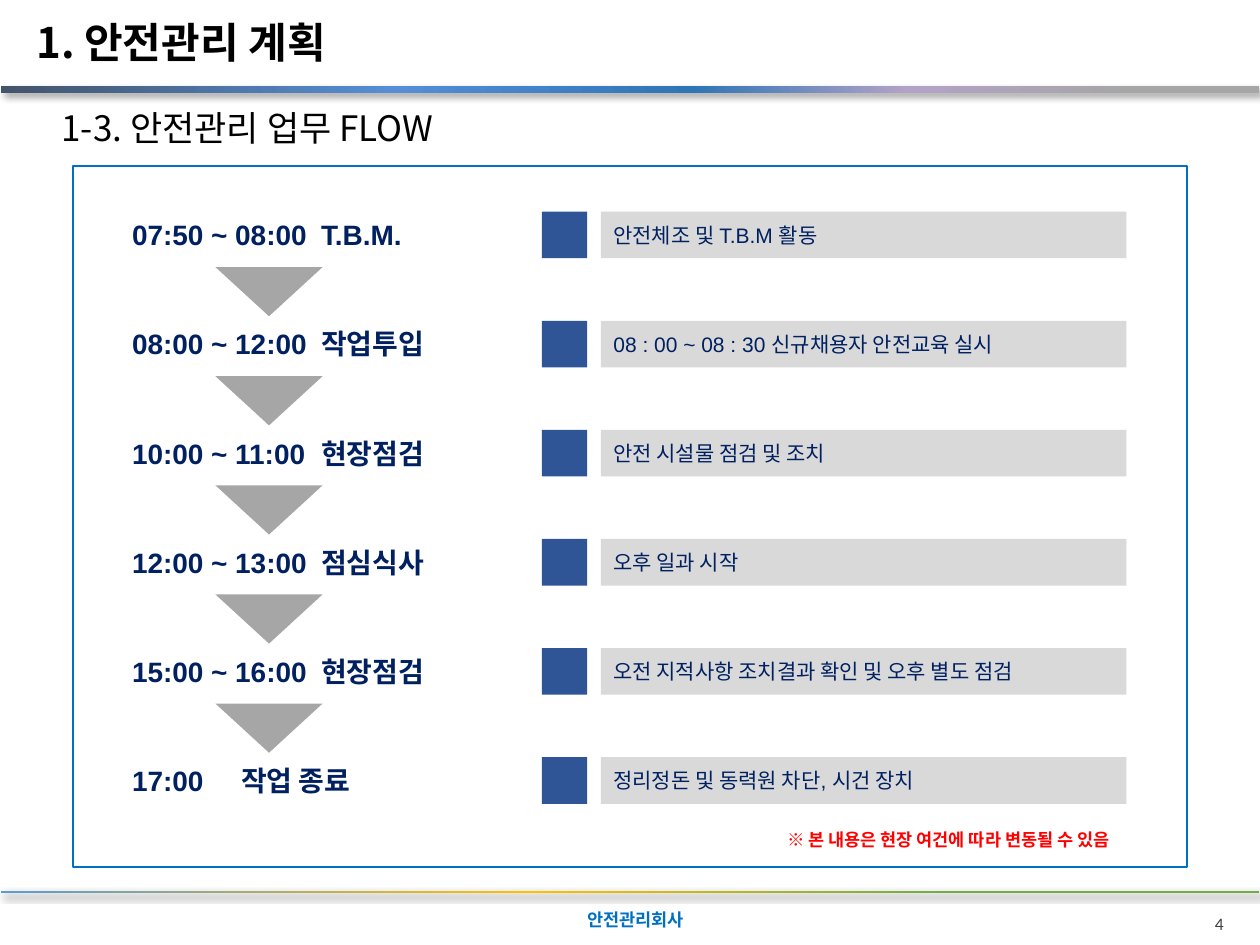
import pptx
import pptx.dml.color
import pptx.enum.shapes
import pptx.enum.text
import pptx.oxml
import pptx.oxml.ns
import pptx.util
from dataclasses import dataclass

SHAPE = pptx.enum.shapes.MSO_SHAPE
ALIGN = pptx.enum.text.PP_ALIGN
ANCHOR = pptx.enum.text.MSO_ANCHOR
RGB = pptx.dml.color.RGBColor.from_string
NAMESPACE = pptx.oxml.ns.nsdecls("a")

UNIT = 0.1
ROW_TOP, ROW_PITCH, ROW_HEIGHT = 16.8, 8.66, 3.7
LABEL_COLUMN = (9.5, 27.6)
MARKER_COLUMN = (43, 3.6)
DETAIL_COLUMN = (47.7, 41.7)
ARROW_COLUMN = (17.1, 8.5)
ARROW_OFFSET, ARROW_HEIGHT = 4.4, 3.9
TASK_TAB, CLOSING_TAB = 15, 8.65

STEPS = [
    ("07:50 ~ 08:00", "T.B.M.", TASK_TAB, "안전체조 및 T.B.M 활동"),
    ("08:00 ~ 12:00", "작업투입", TASK_TAB, "08 : 00 ~ 08 : 30 신규채용자 안전교육 실시"),
    ("10:00 ~ 11:00", "현장점검", TASK_TAB, "안전 시설물 점검 및 조치"),
    ("12:00 ~ 13:00", "점심식사", TASK_TAB, "오후 일과 시작"),
    ("15:00 ~ 16:00", "현장점검", TASK_TAB, "오전 지적사항 조치결과 확인 및 오후 별도 점검"),
    ("17:00", "작업 종료", CLOSING_TAB, "정리정돈 및 동력원 차단, 시건 장치"),
]


@dataclass(frozen=True)
class Theme:
    """Colours, typefaces and type sizes of the slide."""
    korean: str = "Noto Sans CJK KR"
    latin: str = "Arial"
    number: str = "Calibri"
    black: str = "000000"
    navy: str = "002060"
    blue: str = "0070C0"
    marker: str = "2F5597"
    bar: str = "D9D9D9"
    arrow: str = "A6A6A6"
    red: str = "FF0000"
    grey: str = "404040"
    title: int = 24
    subtitle: int = 20
    label: int = 16
    detail: int = 12
    small: int = 10
    header: tuple = ((0, "44546A"), (31, "558ED5"), (55, "2E75B6"), (72, "B3A2C7"), (90, "A6A6A6"))
    footer: tuple = ((0, "5B9BD5"), (42, "FFC000"), (75, "70AD47"))


THEME = Theme()


def units(value):
    """Turn grid units into a length."""
    return pptx.util.Inches(value * UNIT)


def write(shape, text, font, size, color, bold=False, tab=None, para_format=None, **frame_format):
    """Fill a shape with one formatted paragraph."""
    frame = shape.text_frame
    for name, value in ({"word_wrap": True} | frame_format).items():
        setattr(frame, name, value)
    para = frame.paragraphs[0]
    for name, value in ({"alignment": ALIGN.LEFT} | (para_format or {})).items():
        setattr(para, name, value)
    if tab:
        para._p.get_or_add_pPr().append(pptx.oxml.parse_xml(
            f'<a:tabLst {NAMESPACE}><a:tab pos="{units(tab)}" algn="l"/></a:tabLst>'))
    span = para.add_run()
    span.text = text
    for name, value in {"name": font, "size": pptx.util.Pt(size), "bold": bold}.items():
        setattr(span.font, name, value)
    span.font.color.rgb = RGB(color)
    span.font._element.append(pptx.oxml.parse_xml(
        f'<a:ea {NAMESPACE} typeface="{THEME.korean}"/>'))


def add_text(page, place, text, font, size, color, **formats):
    """Add a text box at a grid place."""
    box = page.shapes.add_textbox(*map(units, place))
    write(box, text, font, size, color, **formats)
    return box


def add_block(page, kind, place, fill=None, line=None):
    """Add a flat preset shape at a grid place."""
    shape = page.shapes.add_shape(kind, *map(units, place))
    shape.shadow.inherit = False
    if fill:
        shape.fill.solid()
        shape.fill.fore_color.rgb = RGB(fill)
    else:
        shape.fill.background()
    if line:
        shape.line.color.rgb = RGB(line)
        shape.line.width = pptx.util.Pt(1)
    else:
        shape.line.fill.background()
    return shape


def add_rule(page, top, height, stops):
    """Add a full-width gradient rule with a soft shadow."""
    rule = add_block(page, SHAPE.RECTANGLE, (0.1, top, 99.8, height))
    rule.fill.gradient()
    rule.fill.gradient_angle = 0
    properties = rule._element.spPr
    stop_list = properties.find(".//" + pptx.oxml.ns.qn("a:gsLst"))
    stop_list[:] = [pptx.oxml.parse_xml(
        f'<a:gs {NAMESPACE} pos="{share * 1000}"><a:srgbClr val="{color}"/></a:gs>')
        for share, color in stops]
    properties.find(pptx.oxml.ns.qn("a:effectLst")).append(pptx.oxml.parse_xml(
        f'<a:outerShdw {NAMESPACE} blurRad="{pptx.util.Pt(4)}" dist="{pptx.util.Pt(3)}" '
        f'dir="2700000" algn="tl" rotWithShape="0"><a:srgbClr val="{THEME.black}">'
        '<a:alpha val="40000"/></a:srgbClr></a:outerShdw>'))


def add_step(page, row, time, task, tab, detail):
    """Add one row of the flow: time and task, marker and detail bar."""
    def cell(column):
        left, width = column
        return left, ROW_TOP + row * ROW_PITCH, width, ROW_HEIGHT

    add_text(page, cell(LABEL_COLUMN), f"{time}\t{task}", THEME.latin, THEME.label,
             THEME.navy, bold=True, tab=tab)
    bar = add_block(page, SHAPE.RECTANGLE, cell(DETAIL_COLUMN), THEME.bar)
    write(bar, detail, THEME.latin, THEME.detail, THEME.navy, vertical_anchor=ANCHOR.MIDDLE)
    add_block(page, SHAPE.RECTANGLE, cell(MARKER_COLUMN), THEME.marker)


def add_arrow(page, row):
    """Add the downward triangle below a row."""
    left, width = ARROW_COLUMN
    top = ROW_TOP + ARROW_OFFSET + row * ROW_PITCH
    arrow = add_block(page, SHAPE.ISOSCELES_TRIANGLE, (left, top, width, ARROW_HEIGHT), THEME.arrow)
    arrow.rotation = 180


def add_furniture(page):
    """Add the rules, headings, footer and page number."""
    add_rule(page, 6.8, 0.6, THEME.header)
    add_rule(page, 70.7, 0.2, THEME.footer)
    add_text(page, (1.9, 0, 36.8, 6.7), "1. 안전관리 계획", THEME.korean, THEME.title,
             THEME.black, bold=True, vertical_anchor=ANCHOR.MIDDLE)
    add_text(page, (3.9, 8, 36, 4.4), "1-3. 안전관리 업무 FLOW", THEME.korean,
             THEME.subtitle, THEME.black)
    margins = dict.fromkeys(
        ("margin_left", "margin_top", "margin_right", "margin_bottom"), units(0.3))
    add_text(page, (46.3, 71.4, 21.8, 3.2), "안전관리회사", THEME.korean, THEME.small,
             THEME.blue, bold=True, vertical_anchor=ANCHOR.MIDDLE, **margins)
    add_text(page, (85.4, 72, 12.7, 2.1), "4", THEME.number, THEME.small, THEME.grey,
             para_format={"alignment": ALIGN.RIGHT})


def main():
    """Build the safety workflow slide."""
    deck = pptx.Presentation()
    deck.slide_width, deck.slide_height = units(100), units(75)
    page = deck.slides.add_slide(deck.slide_layouts[6])
    add_furniture(page)
    add_block(page, SHAPE.RECTANGLE, (5.8, 13.2, 88.4, 55.6), line=THEME.blue)
    for row, step in enumerate(STEPS):
        add_step(page, row, *step)
    for row in range(len(STEPS) - 1):
        add_arrow(page, row)
    add_text(page, (57.7, 64.9, 35.1, 3), "※ 본 내용은 현장 여건에 따라 변동될 수 있음",
             THEME.korean, THEME.small, THEME.red, bold=True,
             para_format={"alignment": ALIGN.CENTER, "line_spacing": 1.2},
             margin_top=units(0.6), margin_bottom=units(0.6))
    deck.save("out.pptx")


if __name__ == "__main__":
    main()
